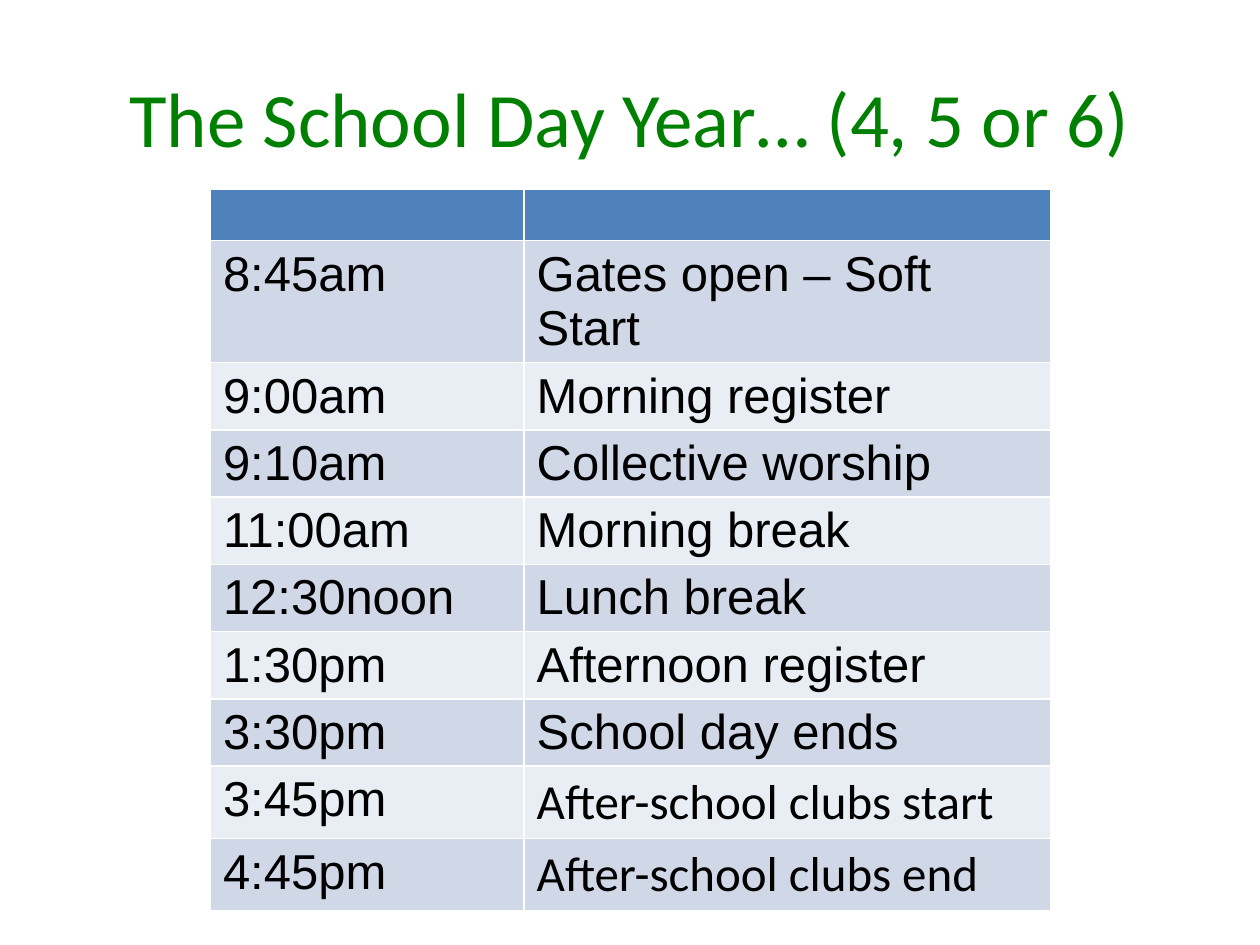
from pptx import Presentation
from pptx.dml.color import RGBColor
from pptx.enum.text import MSO_ANCHOR, PP_ALIGN
from pptx.util import Inches, Pt


def color(hex_value):
    return RGBColor.from_string(hex_value)


def format_text(frame, text, formats):
    paragraph = frame.paragraphs[0]
    run = paragraph.add_run()
    run.text = text
    for name, value in formats.items():
        if name == "color":
            run.font.color.rgb = color(value)
        else:
            setattr(run.font, name, value)
    return paragraph


heading_format = {"name": "Calibri", "size": Pt(44), "color": "008000"}
entry_format = {"name": "Arial", "size": Pt(28), "color": "000000"}
club_format = {**entry_format, "name": "Calibri"}

timetable = [
    ("8:45am", "Gates open – Soft Start"),
    ("9:00am", "Morning register"),
    ("9:10am", "Collective worship"),
    ("11:00am", "Morning break"),
    ("12:30noon", "Lunch break"),
    ("1:30pm", "Afternoon register"),
    ("3:30pm", "School day ends"),
    ("3:45pm", "After-school clubs start"),
    ("4:45pm", "After-school clubs end"),
]

prs = Presentation()
prs.slide_width, prs.slide_height = Inches(10), Inches(7.5)
slide = prs.slides.add_slide(prs.slide_layouts[5])

heading = slide.shapes.title
heading_place = {"left": 0.5, "top": 0.3, "width": 9, "height": 1.25}
for name, value in heading_place.items():
    setattr(heading, name, Inches(value))
heading.text_frame.vertical_anchor = MSO_ANCHOR.MIDDLE
heading_line = format_text(heading.text_frame, "The School Day Year… (4, 5 or 6)", heading_format)
heading_line.alignment = PP_ALIGN.CENTER

row_count = len(timetable) + 1
row_height = Inches(0.41)
schedule = slide.shapes.add_table(
    row_count, 2, Inches(1.67), Inches(1.5), Inches(6.67), row_height * row_count
).table
for column, width in zip(schedule.columns, (2.49, 4.18)):
    column.width = Inches(width)

for index, row in enumerate(schedule.rows):
    row.height = row_height
    band = "4F81BD" if index == 0 else ("E9EDF4", "D0D8E8")[index % 2]
    for cell in row.cells:
        cell.fill.solid()
        cell.fill.fore_color.rgb = color(band)

for index, (time, event) in enumerate(timetable, start=1):
    event_format = club_format if "clubs" in event else entry_format
    format_text(schedule.cell(index, 0).text_frame, time, entry_format)
    format_text(schedule.cell(index, 1).text_frame, event, event_format)

prs.save("out.pptx")
